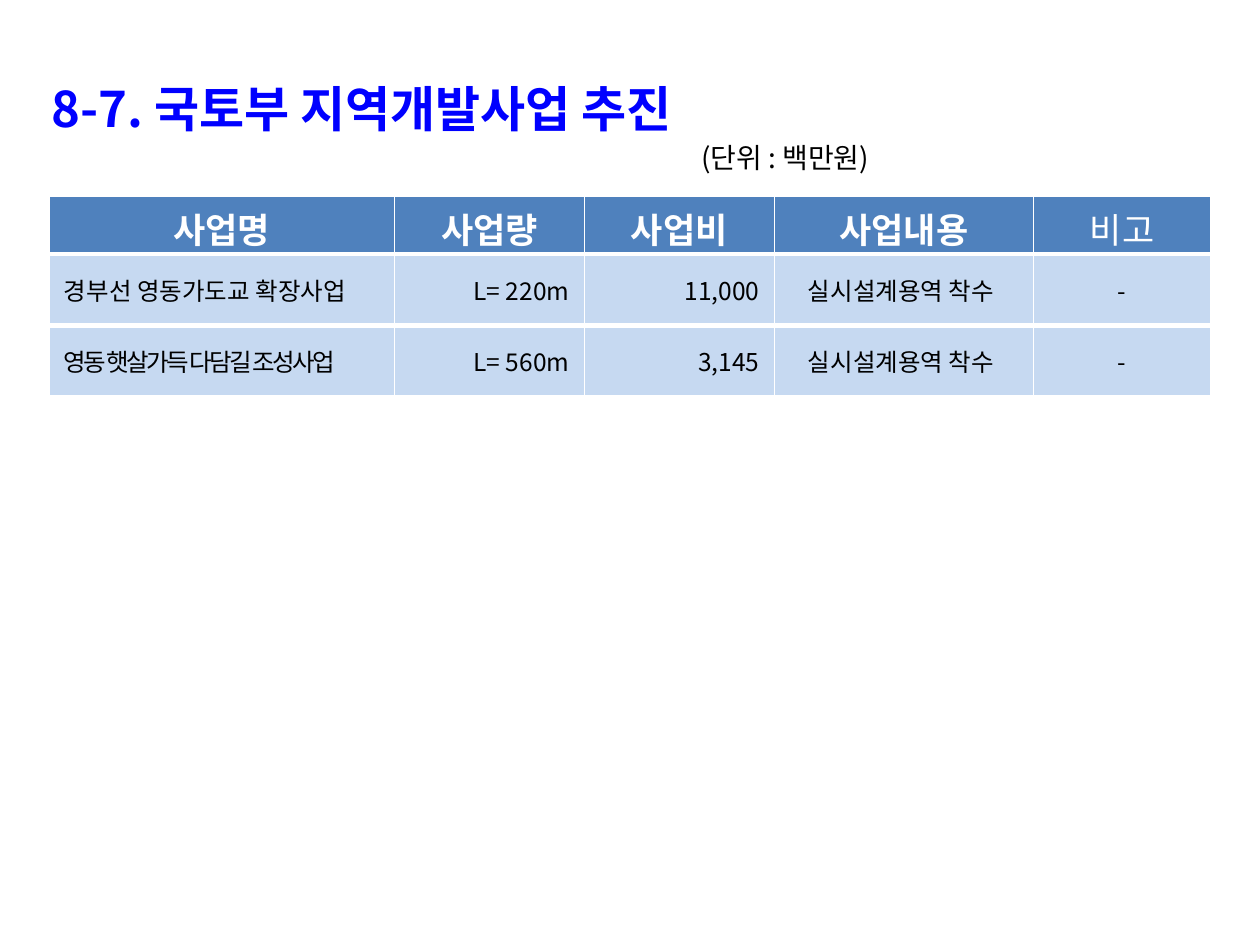
from lxml import etree
from pptx import Presentation
from pptx.dml.color import RGBColor
from pptx.enum.text import MSO_ANCHOR, PP_ALIGN
from pptx.oxml.ns import qn
from pptx.util import Cm, Pt

LEFT, CENTER, RIGHT = PP_ALIGN.LEFT, PP_ALIGN.CENTER, PP_ALIGN.RIGHT
MIDDLE = MSO_ANCHOR.MIDDLE
BLUE = RGBColor(0x00, 0x00, 0xFF)
BLACK = RGBColor(0x00, 0x00, 0x00)
WHITE = RGBColor(0xFF, 0xFF, 0xFF)
HEADER_FILL = RGBColor(0x4F, 0x81, 0xBD)
BODY_FILL = RGBColor(0xC6, 0xD9, 0xF1)

COLUMNS = [
    ("사업명", 6.96, LEFT),
    ("사업량", 3.83, RIGHT),
    ("사업비", 3.83, RIGHT),
    ("사업내용", 5.22, CENTER),
    ("비고", 3.58, CENTER),
]
PROJECTS = [
    ("경부선 영동가도교 확장사업", "L= 220m", "11,000", "실시설계용역 착수 ", "-"),
    ("영동 햇살가득 다담길 조성사업", "L= 560m", "3,145", "실시설계용역 착수 ", "-"),
]
HEADER_HEIGHT, BODY_HEIGHT = 1.16, 1.44
TIGHT_NAME = PROJECTS[1][0]


class SlideBuilder:
    """Adds text and tables in one style to the current slide."""

    def __init__(self, slide, font="Noto Sans CJK KR"):
        self.slide = slide
        self.font = font

    def run(self, paragraph, text, size, color, bold=False, spacing=0):
        run = paragraph.add_run()
        run.text = text
        run.font.name = self.font
        run.font.size = Pt(size)
        run.font.bold = bold
        run.font.color.rgb = color
        properties = run.font._element
        etree.SubElement(properties, qn("a:ea")).set("typeface", self.font)
        if spacing:
            properties.set("spc", str(int(spacing * 100)))

    def heading(self, title, unit, left, top, width, height):
        frame = self.slide.shapes.add_textbox(
            Cm(left), Cm(top), Cm(width), Cm(height)).text_frame
        frame.word_wrap = True
        title_line = frame.paragraphs[0]
        title_line.line_spacing = Pt(35)
        self.run(title_line, title, 28, BLUE, bold=True)
        unit_line = frame.add_paragraph()
        unit_line._p.get_or_add_pPr().set("marL", str(Cm(13.1)))
        unit_line.line_spacing = Pt(18)
        unit_line.space_before = Pt(3.2)
        self.run(unit_line, unit, 16, BLACK)

    def cell(self, cell, text, align, fill, margins, borders, **style):
        cell.fill.solid()
        cell.fill.fore_color.rgb = fill
        cell.vertical_anchor = MIDDLE
        side, top, bottom = margins
        cell.margin_left = cell.margin_right = Cm(side)
        cell.margin_top, cell.margin_bottom = Cm(top), Cm(bottom)
        paragraph = cell.text_frame.paragraphs[0]
        paragraph.alignment = align
        self.run(paragraph, text, **style)
        properties = cell._tc.get_or_add_tcPr()
        for index, (edge, width) in enumerate(zip("LRTB", borders)):
            line = etree.Element(qn(f"a:ln{edge}"), w=str(Pt(width)))
            solid = etree.SubElement(line, qn("a:solidFill"))
            etree.SubElement(solid, qn("a:srgbClr"), val=str(WHITE))
            properties.insert(index, line)

    def table(self, columns, projects, left, top):
        width = sum(column[1] for column in columns)
        height = HEADER_HEIGHT + BODY_HEIGHT * len(projects)
        table = self.slide.shapes.add_table(
            len(projects) + 1, len(columns),
            Cm(left), Cm(top), Cm(width), Cm(height)).table
        table.horz_banding = False
        table.rows[0].height = Cm(HEADER_HEIGHT)
        for row in range(1, len(projects) + 1):
            table.rows[row].height = Cm(BODY_HEIGHT)
        for col, (label, column_width, align) in enumerate(columns):
            table.columns[col].width = Cm(column_width)
            self.cell(table.cell(0, col), label, CENTER, HEADER_FILL,
                      (0.25, 0.13, 0), (1, 1, 1, 3),
                      size=20, color=WHITE, bold=label != "비고")
            for row, project in enumerate(projects, 1):
                value = project[col]
                self.cell(table.cell(row, col), value, align, BODY_FILL,
                          (0.3, 0.13, 0.13), (1, 1, 3, 3),
                          size=14, color=BLACK,
                          spacing=-1.5 if value == TIGHT_NAME else 0)


def main():
    deck = Presentation()
    deck.slide_width, deck.slide_height = Cm(25.4), Cm(19.05)
    builder = SlideBuilder(deck.slides.add_slide(deck.slide_layouts[6]))
    builder.heading("8-7. 국토부 지역개발사업 추진", "(단위 : 백만원)",
                    0.79, 1.4, 24, 2.29)
    builder.table(COLUMNS, PROJECTS, 0.99, 3.96)
    deck.save("out.pptx")


if __name__ == "__main__":
    main()
